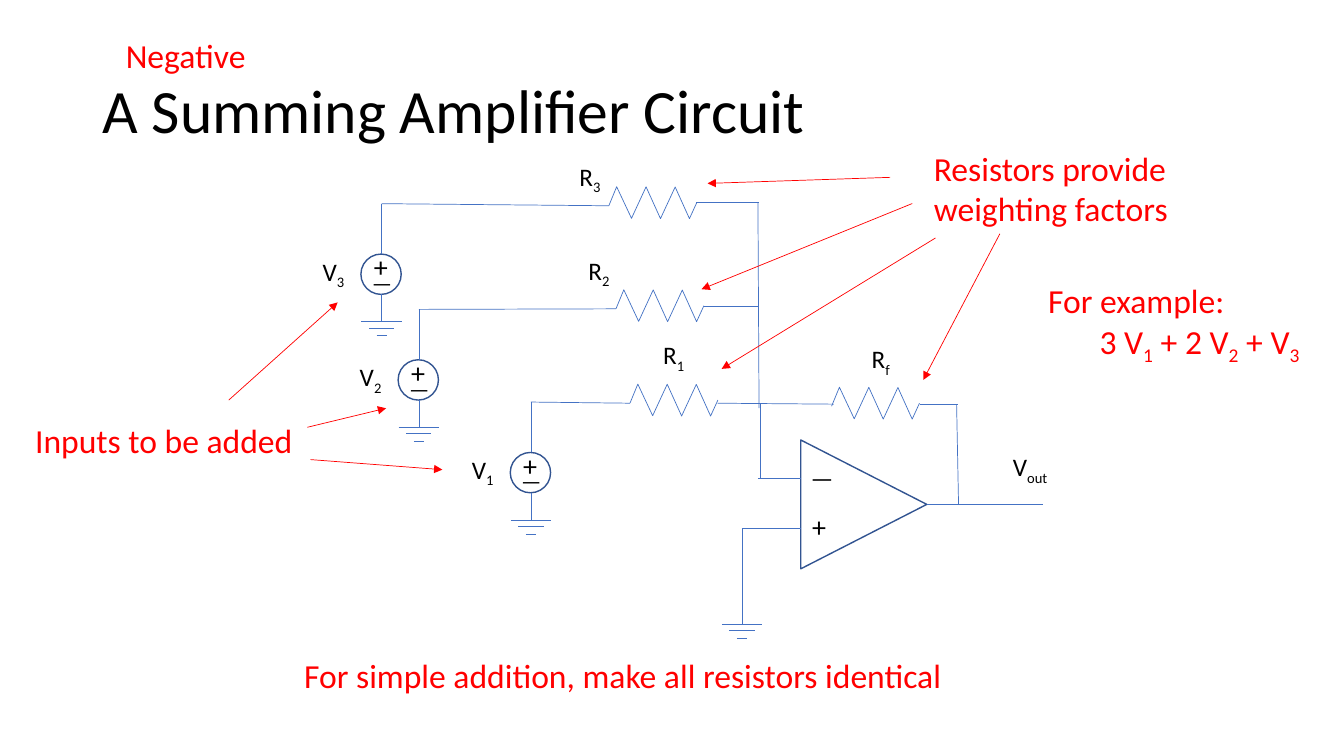
from dataclasses import dataclass

from lxml import etree
from pptx import Presentation
from pptx.dml.color import RGBColor
from pptx.enum.shapes import MSO_CONNECTOR, MSO_SHAPE
from pptx.enum.text import MSO_ANCHOR
from pptx.oxml.ns import qn
from pptx.util import Pt

STRAIGHT = MSO_CONNECTOR.STRAIGHT
TRIANGLE = MSO_SHAPE.ISOSCELES_TRIANGLE
CIRCLE = MSO_SHAPE.OVAL
TOP = MSO_ANCHOR.TOP
MIDDLE = MSO_ANCHOR.MIDDLE


@dataclass(frozen=True)
class Theme:
    font: str = "Calibri"
    ink: RGBColor = RGBColor(0, 0, 0)
    note: RGBColor = RGBColor(0xFF, 0, 0)
    wire: RGBColor = RGBColor(0x44, 0x72, 0xC4)
    outline: RGBColor = RGBColor(0x32, 0x54, 0x91)
    title_size: float = 44
    note_size: float = 24
    plus_size: float = 20
    label_size: float = 18
    minus_size: float = 16
    wire_width: float = 0.5
    outline_width: float = 1


THEME = Theme()
LABEL_SIZE = (41, 28.8)
SIGN_WIDTH = 24.5
ZIGZAG = [(5.6, -13.6), (16.2, 9), (26.6, -13.5), (36.9, 9.2),
          (47.4, -13.4), (57.6, 9.2), (62.8, -2.2)]
GROUND_BARS = [(14.4, 0), (9, 4.7), (3.6, 10)]


def set_values(target, values):
    for name, value in values.items():
        setattr(target, name, value)


def add_text(shapes, box, paragraphs, size, color=THEME.ink, anchor=TOP, indents=(), spacing=1.0):
    frame = shapes.add_textbox(*map(Pt, box)).text_frame
    set_values(frame, {"word_wrap": True, "vertical_anchor": anchor})
    for index, pieces in enumerate(paragraphs):
        paragraph = frame.add_paragraph() if index else frame.paragraphs[0]
        paragraph.line_spacing = spacing
        if index < len(indents):
            paragraph._p.get_or_add_pPr().set("marL", str(Pt(indents[index])))
        for position, piece in enumerate(pieces):
            run = paragraph.add_run()
            run.text = piece
            set_values(run.font, {"name": THEME.font, "size": Pt(size)})
            run.font.color.rgb = color
            if position % 2:
                run._r.get_or_add_rPr().set("baseline", "-25000")


def add_label(shapes, left, top, name, subscript):
    add_text(shapes, (left, top, *LABEL_SIZE), [(name, subscript)], THEME.label_size)


def add_line(shapes, start, end, color=THEME.wire, arrow=False):
    connector = shapes.add_connector(STRAIGHT, *map(Pt, (*start, *end)))
    connector.line.color.rgb = color
    connector.line.width = Pt(THEME.wire_width)
    properties = connector._element.spPr
    if arrow:
        etree.SubElement(properties.find(qn("a:ln")), qn("a:tailEnd"), type="triangle")
    etree.SubElement(properties, qn("a:effectLst"))


def style_outline(shape, color, width):
    shape.shadow.inherit = False
    shape.fill.background()
    shape.line.color.rgb = color
    shape.line.width = Pt(width)


def add_lines(shapes, left, top, segments, color=THEME.wire, arrow=False):
    for x1, y1, x2, y2 in segments:
        add_line(shapes, (left + x1, top + y1), (left + x2, top + y2), color, arrow)


def add_ground(shapes, center, top):
    bars = [(-half, drop, half, drop) for half, drop in GROUND_BARS]
    add_lines(shapes, center, top, bars)


def add_resistor(shapes, left, top, subscript, label_offset):
    builder = shapes.build_freeform(Pt(left), Pt(top))
    points = [(Pt(left + x), Pt(top + y)) for x, y in ZIGZAG]
    builder.add_line_segments(points, close=False)
    style_outline(builder.convert_to_shape(), THEME.wire, THEME.wire_width)
    add_label(shapes, left + label_offset[0], top + label_offset[1], "R", subscript)


def add_source(shapes, left, top, subscript, lead_end):
    diameter = 28.8
    center = left + 14.8
    circle = shapes.add_shape(CIRCLE, *map(Pt, (left, top, diameter, diameter)))
    style_outline(circle, THEME.outline, THEME.outline_width)
    add_text(shapes, (left + 2.2, top - 6.5, SIGN_WIDTH, 31.7), [("+",)], THEME.plus_size)
    add_text(shapes, (left + 0.7, top + 7.2, SIGN_WIDTH, 26.6), [("—",)], THEME.minus_size)
    add_label(shapes, left - 34.5, top - 2.2, "V", subscript)
    add_line(shapes, (center, top), (center, top - 36))
    add_line(shapes, (center, top - 36), lead_end)
    add_line(shapes, (center, top + diameter), (center, top + 48.2))
    add_ground(shapes, center, top + 48.2)


def add_amplifier(shapes, left, top, width, height):
    center_x, center_y = left + width / 2, top + height / 2
    box = (center_x - height / 2, center_y - width / 2, height, width)
    triangle = shapes.add_shape(TRIANGLE, *map(Pt, box))
    triangle.rotation = 90
    style_outline(triangle, THEME.outline, THEME.outline_width)
    add_text(shapes, (left, top + 12.6, SIGN_WIDTH, 28.8), [("—",)], THEME.label_size)
    add_text(shapes, (left + 1, top + 46.4, SIGN_WIDTH, 31.7), [("+",)], THEME.plus_size)
    add_label(shapes, left + 144.4, top + 4.7, "V", "out")
    add_lines(shapes, left, top, [
        (-30.6, 27.7, 0, 27.7),
        (-42, 63.4, 0, 63.4),
        (-42, 63.4, -42, 131.4),
        (width, height / 2, 173.2, height / 2),
    ])
    add_ground(shapes, left - 42, top + 131.4)


def add_circuit(slide, left, top):
    resistors = {
        "1": ((234, 180), (16.6, -49)),
        "2": ((224, 112.6), (-26.7, -41.8)),
        "3": ((218.9, 39), (-28.1, -35.4)),
        "f": ((378, 182.2), (21.6, -48.3)),
    }
    sources = {"1": (148.5, 215.2), "2": (68.4, 149), "3": (41.8, 73.5)}
    for subscript, ((x, y), label_offset) in resistors.items():
        group = slide.shapes.add_group_shape()
        add_resistor(group.shapes, left + x, top + y, subscript, label_offset)
    for subscript, (x, y) in sources.items():
        lead_x, lead_y = resistors[subscript][0]
        group = slide.shapes.add_group_shape()
        add_source(group.shapes, left + x, top + y, subscript, (left + lead_x, top + lead_y))
    amplifier = slide.shapes.add_group_shape()
    add_amplifier(amplifier.shapes, left + 356, top + 206.3, 90, 92)
    add_lines(slide.shapes, left, top, [
        (281.5, 36.7, 326, 36.7),
        (286.6, 110.9, 326, 110.9),
        (325.4, 36.7, 326.2, 183.6),
        (326.9, 180, 326.9, 234),
        (296.6, 180, 379.4, 180.7),
        (441.4, 180.7, 468, 180.7),
        (467.3, 180.7, 468.7, 252),
    ])


def add_note(slide, box, paragraphs, arrows=(), indents=()):
    add_text(slide.shapes, box, paragraphs, THEME.note_size, THEME.note, indents=indents)
    add_lines(slide.shapes, box[0], box[1], arrows, THEME.note, arrow=True)


def add_title(slide, box):
    add_text(slide.shapes, box, [("A Summing Amplifier Circuit",)], THEME.title_size,
             anchor=MIDDLE, spacing=0.9)


def main():
    presentation = Presentation()
    set_values(presentation, {"slide_width": Pt(960), "slide_height": Pt(540)})
    slide = presentation.slides.add_slide(presentation.slide_layouts[6])
    add_title(slide, (66, 28.8, 828, 104.4))
    add_circuit(slide, 216, 108)
    add_note(slide, (18, 296.6, 203.8, 36), [("Inputs to be added",)], [
        (145.4, -10.8, 223.2, -80.6),
        (201.6, 8.6, 257.8, -5),
        (203.8, 31.7, 298, 38.9),
    ])
    add_note(slide, (660, 102.2, 203.8, 65.5), [("Resistors provide weighting factors",)], [
        (-24.2, 24.5, -154.6, 28.8),
        (-8.4, 43.2, -158.9, 104.4),
        (8.2, 67.8, -144.5, 161.3),
        (54.2, 64.8, -0.5, 169.2),
    ])
    add_note(slide, (210.2, 464.4, 563.8, 36),
             [("For simple addition, make all resistors identical",)])
    add_note(slide, (741.6, 196.6, 198, 65.5),
             [("For example:",), ("3 V", "1", " + 2 V", "2", " + V", "3")], indents=(0, 36.7))
    add_note(slide, (82.8, 21.6, 105.8, 36), [("Negative",)])
    presentation.save("out.pptx")


if __name__ == "__main__":
    main()
